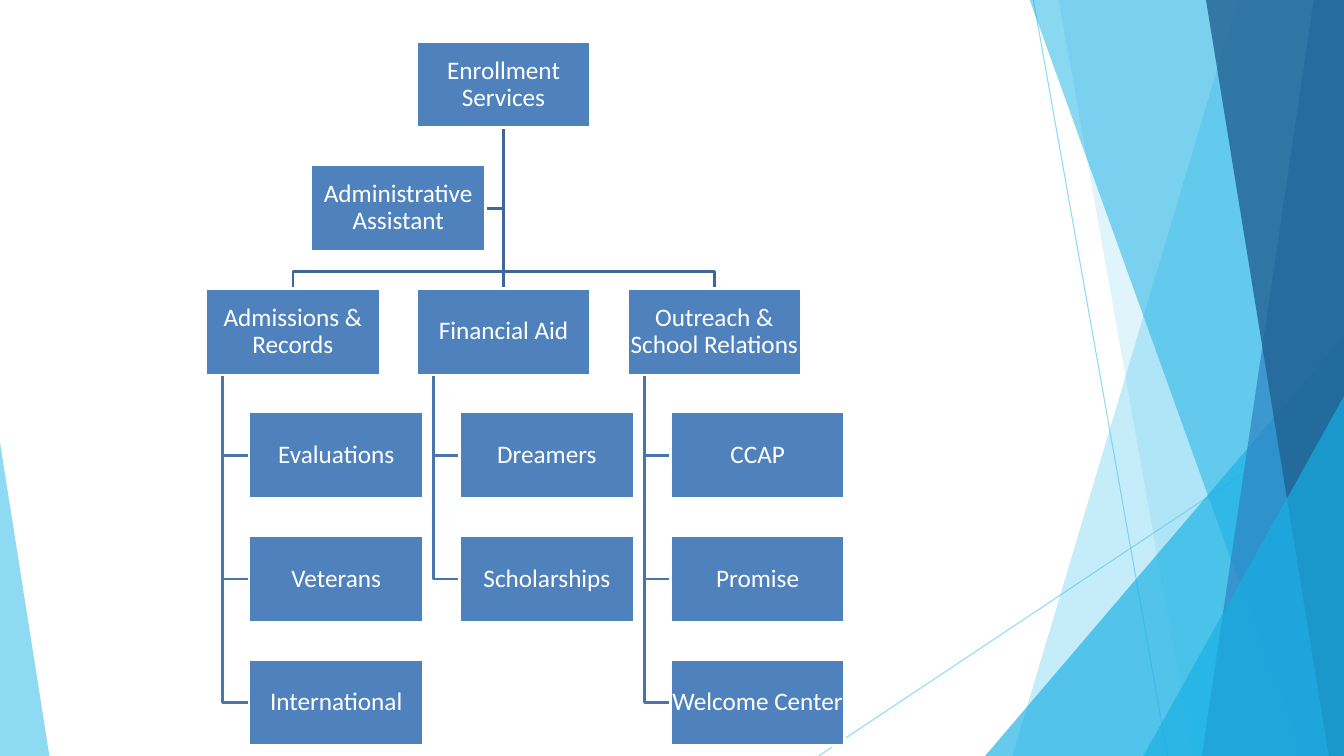
from pptx import Presentation
from pptx.dml.color import RGBColor
from pptx.enum.shapes import MSO_CONNECTOR, MSO_SHAPE
from pptx.enum.text import MSO_ANCHOR, PP_ALIGN
from pptx.oxml.ns import qn
from pptx.util import Inches, Pt

WHITE = RGBColor(0xFF, 0xFF, 0xFF)
SKY = RGBColor(0x5F, 0xCB, 0xEF)
CYAN = RGBColor(0x17, 0xB0, 0xE4)
BLUE = RGBColor(0x2E, 0x83, 0xC3)
NAVY = RGBColor(0x22, 0x62, 0x92)
BOX_BLUE = RGBColor(0x4F, 0x81, 0xBD)
TRUNK_BLUE = RGBColor(0x3F, 0x67, 0x97)
BRANCH_BLUE = RGBColor(0x48, 0x75, 0xAC)

SLIDE_W, SLIDE_H = 13.33, 7.5
BOX_W, BOX_H = 1.73, 0.86
LEFT, TOP = 2.04, 0.41
COL_STEP, ROW_STEP = 2.09, 6.13 / 5
LEAF_INDENT, STEM_INDENT = 0.43, 0.17

prs = Presentation()
prs.slide_width, prs.slide_height = Inches(SLIDE_W), Inches(SLIDE_H)
s = prs.slides.add_slide(prs.slide_layouts[6])


def set_opacity(shape, percent):
    """Make every colour of the shape's fill and line partly transparent."""
    for color in shape._element.spPr.iter(qn("a:srgbClr")):
        alpha = color.makeelement(qn("a:alpha"), {"val": str(percent * 1000)})
        color.append(alpha)


def add_box(text, x, y, size=18, font="Calibri", color=WHITE, fill=BOX_BLUE):
    sp = s.shapes.add_shape(MSO_SHAPE.RECTANGLE, Inches(x), Inches(y),
                            Inches(BOX_W), Inches(BOX_H))
    sp.shadow.inherit = False
    sp.fill.solid()
    sp.fill.fore_color.rgb = fill
    sp.line.color.rgb = WHITE
    sp.line.width = Pt(2)
    tf = sp.text_frame
    tf.word_wrap = True
    tf.vertical_anchor = MSO_ANCHOR.MIDDLE
    tf.margin_left = tf.margin_right = Inches(0.01)
    tf.margin_top = tf.margin_bottom = Inches(0.01)
    p = tf.paragraphs[0]
    p.alignment = PP_ALIGN.CENTER
    p.line_spacing = 0.9
    r = p.add_run()
    r.text = text
    r.font.name, r.font.size = font, Pt(size)
    r.font.color.rgb = color


# Background: two thin lines, then overlapping translucent facets
for x1, y1, x2, y2 in [(10.25, 0, 11.58, SLIDE_H), (SLIDE_W, 4.03, 8.12, SLIDE_H)]:
    line = s.shapes.add_connector(MSO_CONNECTOR.STRAIGHT, Inches(x1), Inches(y1),
                                  Inches(x2), Inches(y2))
    line.line.color.rgb = SKY
    line.line.width = Pt(0.75)
    line._element.spPr.append(line._element.makeelement(qn("a:effectLst"), {}))
    set_opacity(line, 70)

# Bands: (top left x, bottom left x); triangles: (left, top, width, apex)
facets = [
    ((12.28, 10.04), SKY, 36),
    ((10.5, 11.83), SKY, 20),
    ((9.77, 3.33, 3.56, 1), CYAN, 66),
    ((10.21, 12.91), CYAN, 50),
    ((13.03, 11.92), BLUE, 70),
    ((11.96, 13.18), NAVY, 80),
    ((11.34, 3.93, 1.99, 1), CYAN, 66),
    ((0, 4.39, 0.49, 0), SKY, 70),
]
for geometry, color, opacity in facets:
    if len(geometry) == 2:
        top_x, bottom_x = geometry
        fb = s.shapes.build_freeform(Inches(top_x), Inches(-0.01))
        fb.add_line_segments([(Inches(SLIDE_W), Inches(-0.01)),
                              (Inches(SLIDE_W), Inches(SLIDE_H)),
                              (Inches(bottom_x), Inches(SLIDE_H))], close=True)
        sp = fb.convert_to_shape()
    else:
        x, y, w, apex = geometry
        sp = s.shapes.add_shape(MSO_SHAPE.ISOSCELES_TRIANGLE, Inches(x), Inches(y),
                                Inches(w), Inches(SLIDE_H - y))
        sp.adjustments[0] = apex
    sp.shadow.inherit = False
    sp.fill.solid()
    sp.fill.fore_color.rgb = color
    sp.line.fill.background()
    set_opacity(sp, opacity)

# Organisation chart
departments = [
    ("Admissions & Records", ["Evaluations", "Veterans", "International"]),
    ("Financial Aid", ["Dreamers", "Scholarships"]),
    ("Outreach & School Relations", ["CCAP", "Promise", "Welcome Center"]),
]
root_x = LEFT + COL_STEP
trunk_x = root_x + BOX_W / 2
trunk_y = TOP + BOX_H
assistant_x, assistant_y = root_x - COL_STEP / 2, TOP + ROW_STEP
dept_y = TOP + 2 * ROW_STEP
bus_y = dept_y - 0.17

boxes = [("Enrollment Services", root_x, TOP),
         ("Administrative Assistant", assistant_x, assistant_y)]
assistant_mid = assistant_y + BOX_H / 2
routes = [(TRUNK_BLUE, [(trunk_x, trunk_y), (trunk_x, assistant_mid),
                        (assistant_x + BOX_W, assistant_mid)])]
for col, (department, teams) in enumerate(departments):
    x = LEFT + col * COL_STEP
    center_x, stem_x, leaf_x = x + BOX_W / 2, x + STEM_INDENT, x + LEAF_INDENT
    boxes.append((department, x, dept_y))
    routes.append((TRUNK_BLUE, [(trunk_x, trunk_y), (trunk_x, bus_y),
                                (center_x, bus_y), (center_x, dept_y)]))
    for row, team in enumerate(teams, start=1):
        y = dept_y + row * ROW_STEP
        boxes.append((team, leaf_x, y))
        routes.append((BRANCH_BLUE, [(stem_x, dept_y + BOX_H), (stem_x, y + BOX_H / 2),
                                     (leaf_x, y + BOX_H / 2)]))

for color, route in routes:
    points = [(Inches(x), Inches(y)) for x, y in route]
    fb = s.shapes.build_freeform(*points[0])
    fb.add_line_segments(points[1:], close=False)
    sp = fb.convert_to_shape()
    sp.shadow.inherit = False
    sp.fill.background()
    sp.line.color.rgb = color
    sp.line.width = Pt(2)

for text, x, y in boxes:
    add_box(text, x, y)

prs.save("out.pptx")
